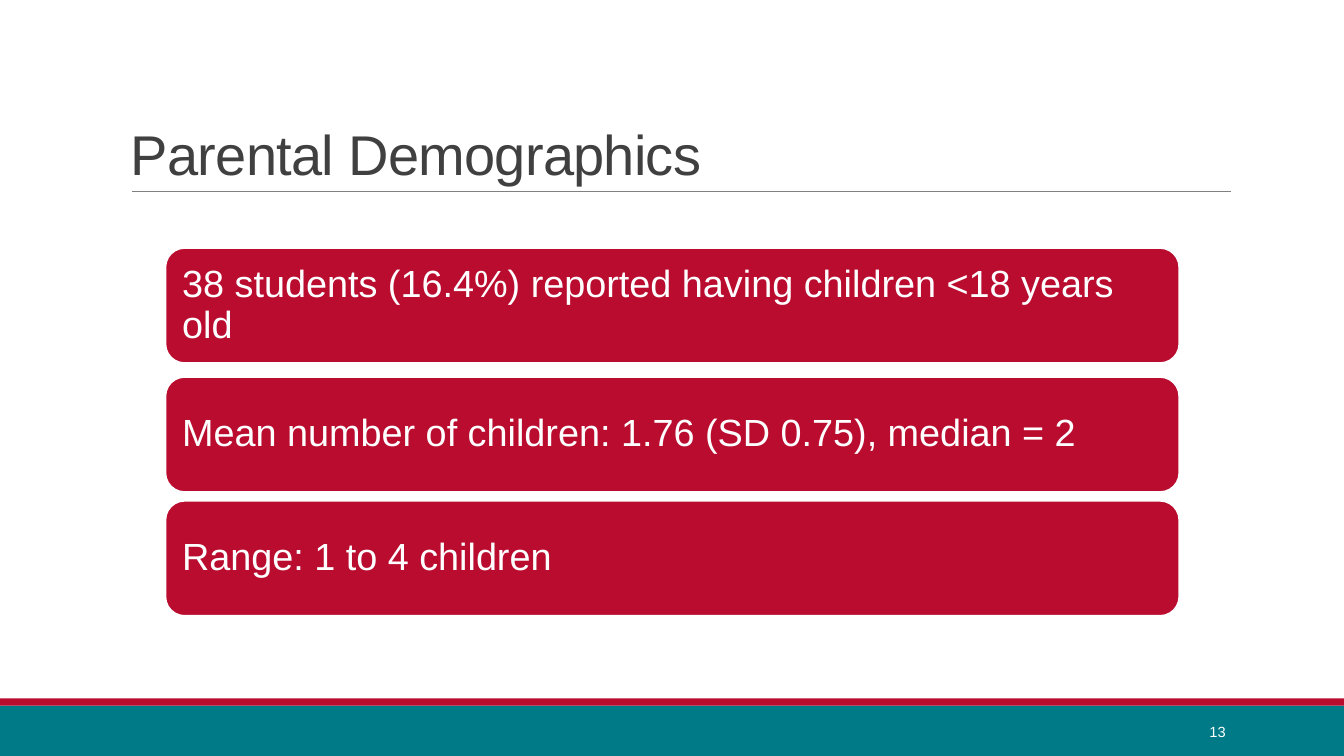
from lxml.etree import SubElement
from pptx import Presentation
from pptx.dml.color import RGBColor as RGB
from pptx.enum.shapes import MSO_CONNECTOR as LINE, MSO_SHAPE as SHAPE
from pptx.enum.text import MSO_ANCHOR as ANCHOR, PP_ALIGN as ALIGN
from pptx.oxml.ns import qn
from pptx.util import Cm, Pt

COLORS = {"teal": "007A86", "red": "BA0C2F", "rule": "808080",
          "title": "404040", "white": "FFFFFF"}
FACTS = [
    (6.25, "38 students (16.4%) reported having children <18 years old"),
    (9.5, "Mean number of children: 1.76 (SD 0.75), median = 2"),
    (12.62, "Range: 1 to 4 children"),
]


def color(name):
    return RGB.from_string(COLORS[name])


def write(shape, text, size, tint, anchor, align=ALIGN.LEFT, space=1.0):
    frame = shape.text_frame
    frame.text = text
    frame.word_wrap = True
    frame.vertical_anchor = anchor
    para = frame.paragraphs[0]
    para.alignment = align
    para.line_spacing = space
    run = para.runs[0]
    run.font.name = "Arial"
    run.font.size = Pt(size)
    run.font.color.rgb = color(tint)
    return run


def block(slide, kind, box, fill):
    shape = slide.shapes.add_shape(kind, *map(Cm, box))
    shape.shadow.inherit = False
    shape.fill.solid()
    shape.fill.fore_color.rgb = color(fill)
    shape.line.fill.background()
    return shape


def footer(slide, box, number):
    left, top, width, height = box
    stripe = 0.18
    block(slide, SHAPE.RECTANGLE, (left, top + stripe, width, height - stripe), "teal")
    block(slide, SHAPE.RECTANGLE, (left, top, width, stripe), "red")
    label = slide.shapes.add_textbox(
        Cm(left + 27.51), Cm(top + 0.33), Cm(3.63), Cm(1.02))
    write(label, number, 10.5, "white", ANCHOR.MIDDLE, ALIGN.RIGHT)


def header(slide, box, text):
    left, top, width, height = box
    base = Cm(top + height)
    rule = slide.shapes.add_connector(
        LINE.STRAIGHT, Cm(left + 0.28), base, Cm(left + width + 0.02), base)
    rule.line.color.rgb = color("rule")
    rule.line.width = Pt(0.5)
    SubElement(rule._element.spPr, qn("a:effectLst"))
    title = slide.shapes.add_textbox(*map(Cm, box))
    run = write(title, text, 40, "title", ANCHOR.BOTTOM, space=0.85)
    run.font._element.set("spc", "-50")


def card(slide, box, text):
    shape = block(slide, SHAPE.ROUNDED_RECTANGLE, box, "red")
    shape.line.color.rgb = color("white")
    shape.line.width = Pt(1.25)
    frame = shape.text_frame
    frame.margin_left = frame.margin_right = Cm(0.28)
    frame.margin_top = frame.margin_bottom = Cm(0.28)
    write(shape, text, 27, "white", ANCHOR.MIDDLE, space=0.9)


def main():
    deck = Presentation()
    deck.slide_width, deck.slide_height = Cm(33.87), Cm(19.05)
    slide = deck.slides.add_slide(deck.slide_layouts[6])
    footer(slide, (0, 17.6, 33.87, 1.45), "13")
    header(slide, (3.05, 0.79, 27.94, 4.04), "Parental Demographics")
    for top, text in FACTS:
        card(slide, (4.17, top, 25.55, 2.9), text)
    deck.save("out.pptx")


if __name__ == "__main__":
    main()
